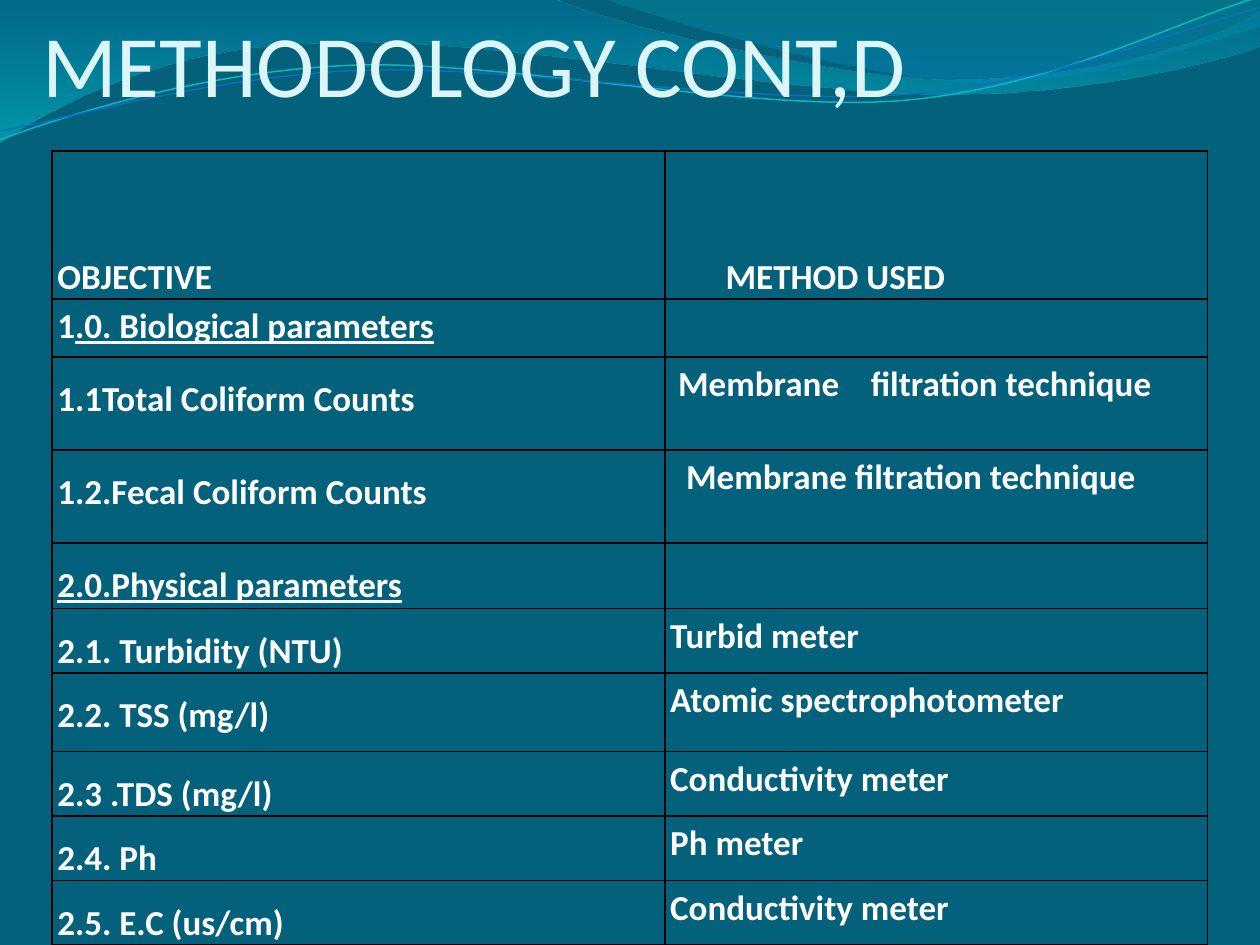
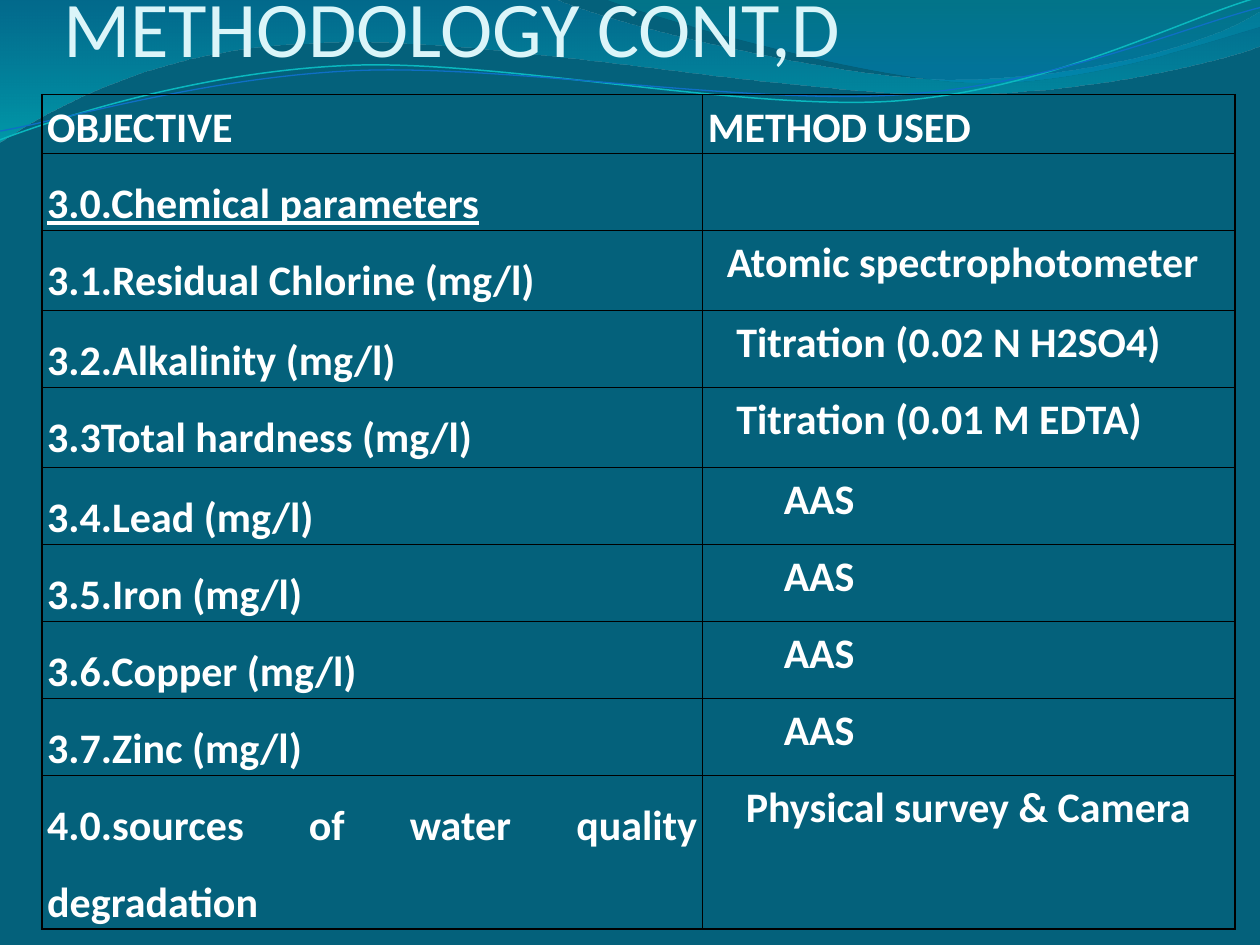
from pptx import Presentation, util as u
from pptx.dml.color import RGBColor
from pptx.enum import text as t
from pptx.oxml import parse_xml
from pptx.oxml.ns import nsdecls, qn

DEEP_TEAL = RGBColor(0x04, 0x61, 0x7B)
PALE_AQUA = RGBColor(0xDB, 0xF5, 0xF9)
WHITE = RGBColor(0xFF, 0xFF, 0xFF)
AQUA = RGBColor(0x0A, 0xB8, 0xBF)
BLUE = RGBColor(0x0F, 0x6F, 0xC6)
BORDER = RGBColor(0x00, 0x00, 0x00)
FONT = "Calibri"
NO_STYLE = "{2D5ABB26-0587-4C30-8999-92F81FD0307C}"
SPACE_WIDTH = 0.226  # share of the text size

# Waves in points: a start, then lines (x, y) and Bezier curves (two controls, end).
# Gradient stops are position %, colour, opacity %.
BANDS = [
    ([(0, 0), (316.8, -0.7), (342.7, 12.2, 478.1, 45.4, 545.8, 45.4),
      (614.2, 45.4, 689.8, 26.6, 720, 6.5), (720.7, 25.9),
      (707.8, 31.7, 626.4, 54.7, 537.1, 54), (447.8, 54, 275, 20.2, 185, 24.5),
      (92.9, 25.9, 33.1, 59.8, -0.7, 81.4)],
     [(0, "0074A1", 45), (100, "00C6CF", 55)]),
    ([(344.9, -0.7), (366.5, 7.9, 491, 44.6, 553.7, 46.8),
      (616.3, 49.7, 691.9, 23, 720, 15.1), (720, 0)],
     [(0, "00A1A9", 30), (80, "008BBF", 45)]),
]
STRANDS = [
    ([(0, 79.9), (34.6, 67, 113.8, 41, 199.4, 37.4),
      (284.4, 33.8, 427, 64.1, 513.4, 57.6), (599.8, 51.1, 675.4, 10.8, 718.6, -1.4)],
     AQUA, 0.85),
    ([(0, 74.9), (33.8, 69.1, 118.1, 43.9, 203.8, 40.3),
      (290.2, 36.7, 429.8, 60.5, 516.2, 54), (601.9, 48.2, 677.5, 15.1, 720, 4.3)],
     BLUE, 0.75),
]

# Rows: height, objective, method, indent of the method in spaces.
# A cell is a string, or a list of runs: text, underlined, extra letter spacing.
SLIDES = [
    dict(title_box=(24, -30, 648, 95.5), title_size=50, text_size=20,
         table_at=(29.8, 86.4), columns=(350.2, 310), tight_rows=2, rows=[
             (84.5, "OBJECTIVE", "METHOD USED", 7),
             (33.2, [("1", False, 0), (".0. Biological parameters", True, 0)], "", 0),
             (53, "1.1Total Coliform Counts",
              [("Membrane", False, 0), (" ", False, 13.5),
               ("filtration technique", False, 0)], 1),
             (53.2, "1.2.Fecal Coliform Counts", "Membrane filtration technique", 2),
             (37.6, [("2.0.Physical parameters", True, 0)], "", 0),
             (36.6, "2.1. Turbidity (NTU)", "Turbid meter", 0),
             (45, "2.2. TSS (mg/l)", "Atomic spectrophotometer", 0),
             (36.6, "2.3 .TDS (mg/l)", "Conductivity meter", 0),
             (36.6, "2.4. Ph", "Ph meter", 0),
             (36.6, "2.5. E.C (us/cm)", "Conductivity meter", 0),
         ]),
    dict(title_box=(36, 0, 648, 42), title_size=45, text_size=24,
         table_at=(24, 54), columns=(377.5, 304.3), tight_rows=1, rows=[
             (33.6, "OBJECTIVE", "METHOD USED", 0),
             (44, [("3.0.Chemical parameters", True, 0)], "", 0),
             (45.7, "3.1.Residual Chlorine (mg/l)", "Atomic spectrophotometer", 2),
             (44, "3.2.Alkalinity (mg/l)", "Titration (0.02 N H2SO4)", 3),
             (45.7, "3.3Total hardness (mg/l)", "Titration (0.01 M EDTA)", 3),
             (44, "3.4.Lead (mg/l)", "AAS", 8),
             (44, "3.5.Iron (mg/l)", "AAS", 8),
             (44, "3.6.Copper (mg/l)", "AAS", 8),
             (44, "3.7.Zinc (mg/l)", "AAS", 8),
             (87.6, "4.0.sources of water quality degradation",
              "Physical survey & Camera", 4),
         ]),
]


def draw_wave(slide, segments, close):
    """Draw a freeform through the segment ends, then bend its curved segments."""
    corners = [(u.Pt(segment[-2]), u.Pt(segment[-1])) for segment in segments]
    builder = slide.shapes.build_freeform(*corners[0])
    builder.add_line_segments(corners[1:], close=close)
    shape = builder.convert_to_shape()
    shape.shadow.inherit = False
    shape.fill.background()
    lines = list(shape.element.iter(qn("a:lnTo")))
    for line, segment in zip(lines, segments[1:]):
        if len(segment) == 6:
            points = "".join(
                f'<a:pt x="{u.Pt(x) - shape.left}" y="{u.Pt(y) - shape.top}"/>'
                for x, y in zip(segment[::2], segment[1::2]))
            curve = parse_xml(
                f'<a:cubicBezTo {nsdecls("a")}>{points}</a:cubicBezTo>')
            line.getparent().replace(line, curve)
    return shape


def write_cell(cell, content, size, spacing, alignment, indent):
    """Fill in one bordered, see-through table cell."""
    cell.margin_left = u.Pt(3 + indent * size * SPACE_WIDTH)
    cell.margin_right = u.Pt(3)
    cell.margin_top = cell.margin_bottom = 0
    properties = cell._tc.get_or_add_tcPr()
    for side in ("lnL", "lnR", "lnT", "lnB"):
        properties.append(parse_xml(
            f'<a:{side} {nsdecls("a")} w="{u.Pt(1)}"><a:solidFill>'
            f'<a:srgbClr val="{BORDER}"/></a:solidFill></a:{side}>'))
    cell.fill.background()
    if not content:
        return
    paragraph = cell.text_frame.paragraphs[0]
    paragraph.line_spacing = spacing
    paragraph.alignment = alignment
    runs = [(content, False, 0)] if isinstance(content, str) else content
    for words, underlined, letter_spacing in runs:
        run = paragraph.add_run()
        run.text = words
        run.font.name = FONT
        run.font.size = u.Pt(size)
        run.font.bold = True
        run.font.underline = underlined
        run.font.color.rgb = WHITE
        if letter_spacing:
            run._r.get_or_add_rPr().set("spc", str(round(letter_spacing * 100)))


presentation = Presentation()
presentation.slide_width = u.Pt(720)
presentation.slide_height = u.Pt(540)
master = presentation.slide_master
master.background.fill.solid()
master.background.fill.fore_color.rgb = DEEP_TEAL
layout = presentation.slide_layouts[5]
slides = [presentation.slides.add_slide(layout) for _ in SLIDES]

# The waves are drawn on a slide, then moved to the master.
waves = []
for segments, stops in BANDS:
    band = draw_wave(slides[0], segments, close=True)
    band.line.fill.background()
    stop_xml = "".join(
        f'<a:gs pos="{position * 1000}"><a:srgbClr val="{colour}">'
        f'<a:alpha val="{opacity * 1000}"/></a:srgbClr></a:gs>'
        for position, colour, opacity in stops)
    gradient = parse_xml(f'<a:gradFill {nsdecls("a")}><a:gsLst>{stop_xml}</a:gsLst>'
                         '<a:lin ang="5400000" scaled="0"/></a:gradFill>')
    band_properties = band.element.spPr
    band_properties.replace(band_properties.find(qn("a:noFill")), gradient)
    waves.append(band)
for segments, colour, width in STRANDS:
    strand = draw_wave(slides[0], segments, close=False)
    strand.line.color.rgb = colour
    strand.line.width = u.Pt(width)
    waves.append(strand)
for index, wave in enumerate(waves):
    wave.element.nvSpPr.cNvPr.set("id", str(20 + index))
    master.shapes.element.insert(2 + index, wave.element)

for slide, content in zip(slides, SLIDES):
    title = slide.shapes.title
    title.left, title.top, title.width, title.height = map(u.Pt, content["title_box"])
    frame = title.text_frame
    frame.auto_size = t.MSO_AUTO_SIZE.NONE
    frame.word_wrap = True
    frame.vertical_anchor = t.MSO_ANCHOR.BOTTOM
    frame.margin_left = frame.margin_right = frame.margin_bottom = 0
    frame.margin_top = u.Pt(3.6)
    frame.paragraphs[0].alignment = t.PP_ALIGN.LEFT
    run = frame.paragraphs[0].add_run()
    run.text = "METHODOLOGY CONT,D"
    run.font.name = FONT
    run.font.size = u.Pt(content["title_size"])
    run.font.color.rgb = PALE_AQUA

    rows, columns = content["rows"], content["columns"]
    left, top = content["table_at"]
    height = sum(row[0] for row in rows)
    table = slide.shapes.add_table(len(rows), len(columns), u.Pt(left), u.Pt(top),
                                   u.Pt(sum(columns)), u.Pt(height)).table
    table.first_row = table.horz_banding = False
    table._tbl.tblPr.find(qn("a:tableStyleId")).text = NO_STYLE
    for column, width in zip(table.columns, columns):
        column.width = u.Pt(width)
    for index, (row_height, objective, method, indent) in enumerate(rows):
        table.rows[index].height = u.Pt(row_height)
        tight = index < content["tight_rows"]
        objective_cell, method_cell = table.rows[index].cells
        write_cell(objective_cell, objective, content["text_size"],
                   1.15 if tight else 1.5,
                   t.PP_ALIGN.LEFT if tight else t.PP_ALIGN.JUSTIFY, 0)
        write_cell(method_cell, method, content["text_size"],
                   1.15, t.PP_ALIGN.LEFT, indent)
    for cell in table.rows[0].cells:
        cell.vertical_anchor = t.MSO_ANCHOR.BOTTOM

presentation.save("out.pptx")
